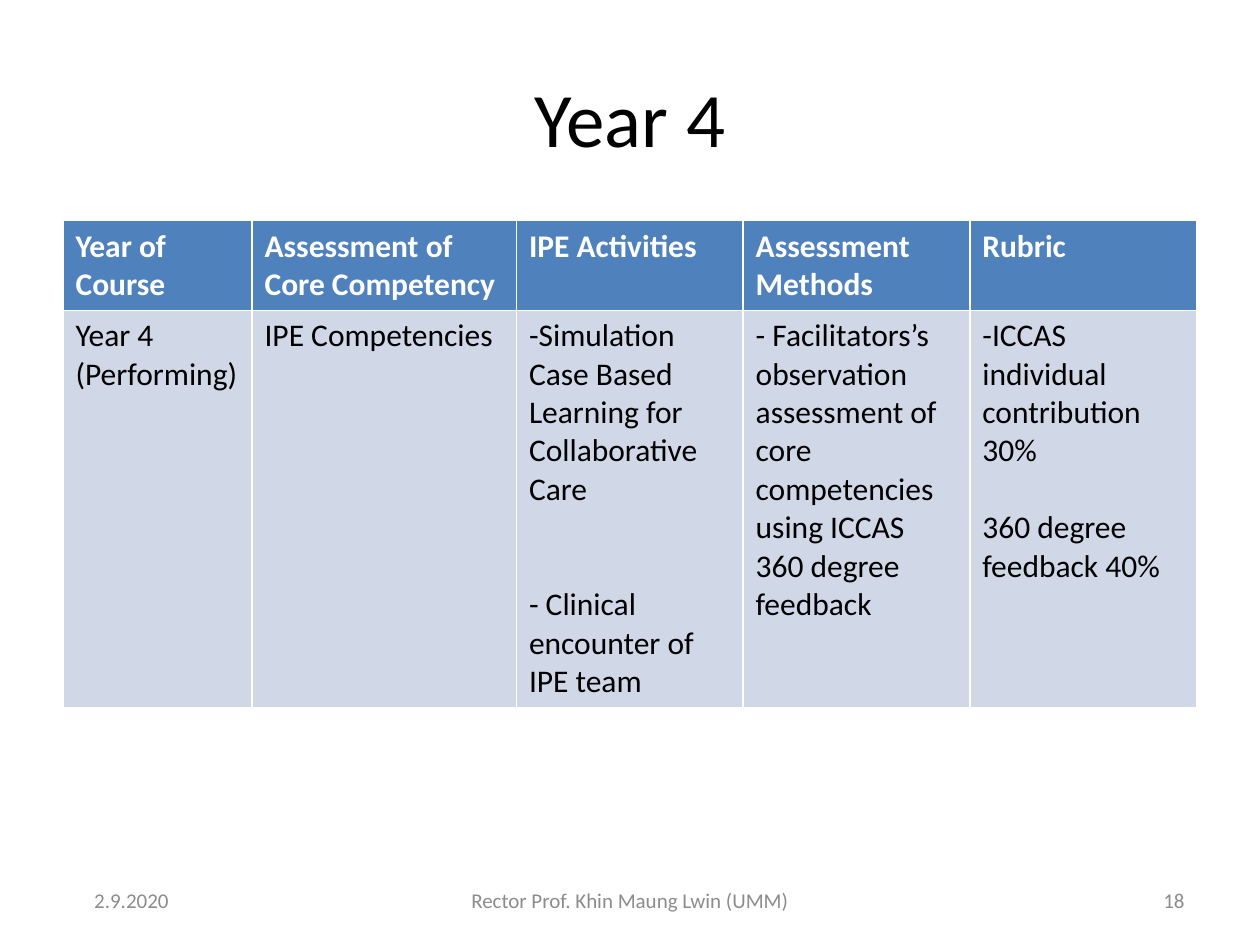
from pptx import Presentation
from pptx.dml import color
from pptx.enum import text
from pptx.util import Cm, Pt

COLORS = {
    "ink": "000000",
    "header_text": "FFFFFF",
    "header_fill": "4F81BD",
    "body_fill": "D0D8E8",
    "footer": "8C8C8C",
}
FONT = "Calibri"
LINE = 22
HEADINGS = ["Year of Course", "Assessment of Core Competency", "IPE Activities",
            "Assessment Methods", "Rubric"]
YEAR_PLAN = [
    [("Year 4", 0), ("(Performing)", 0)],
    [("IPE Competencies", 0)],
    [("-Simulation Case Based Learning for Collaborative Care", 0),
     ("- Clinical encounter of IPE team", 2)],
    [("- Facilitators’s observation assessment of core competencies "
      "using ICCAS 360 degree feedback", 0)],
    [("-ICCAS individual contribution 30%", 0), ("360 degree feedback 40%", 1)],
]
COLUMN_WIDTHS = [3.81, 5.33, 4.57, 4.57, 4.57]
ROW_HEIGHTS = [1.78, 7.87]


def rgb(name):
    """Return the named colour."""
    return color.RGBColor.from_string(COLORS[name])


def format_runs(paragraph, size, ink, bold=False):
    """Format every run of a paragraph."""
    for run in paragraph.runs:
        run.font.name = FONT
        run.font.size = Pt(size)
        run.font.bold = bold
        run.font.color.rgb = rgb(ink)


def add_title(slide, wording):
    """Fill and place the title placeholder."""
    title = slide.shapes.title
    title.left, title.top, title.width, title.height = Cm(1.27), Cm(0.76), Cm(22.86), Cm(3.18)
    title.text_frame.text = wording
    title.text_frame.vertical_anchor = text.MSO_ANCHOR.MIDDLE
    heading = title.text_frame.paragraphs[0]
    heading.alignment = text.PP_ALIGN.CENTER
    format_runs(heading, 44, "ink")


def fill_cell(cell, entries, fill, ink, bold=False):
    """Write (wording, lines of space before) entries into a table cell."""
    cell.fill.solid()
    cell.fill.fore_color.rgb = rgb(fill)
    cell.text_frame.text = "\n".join(wording for wording, _ in entries)
    for paragraph, (_, gap) in zip(cell.text_frame.paragraphs, entries):
        if gap:
            paragraph.space_before = Pt(gap * LINE)
        format_runs(paragraph, 18, ink, bold)


def add_plan_table(slide):
    """Add the assessment plan table."""
    plan = slide.shapes.add_table(
        len(ROW_HEIGHTS), len(COLUMN_WIDTHS), Cm(1.27), Cm(4.45),
        Cm(sum(COLUMN_WIDTHS)), Cm(sum(ROW_HEIGHTS))).table
    for column, width in zip(plan.columns, COLUMN_WIDTHS):
        column.width = Cm(width)
    for row, height in zip(plan.rows, ROW_HEIGHTS):
        row.height = Cm(height)
    for index, (heading, entries) in enumerate(zip(HEADINGS, YEAR_PLAN)):
        fill_cell(plan.cell(0, index), [(heading, 0)], "header_fill", "header_text", True)
        fill_cell(plan.cell(1, index), entries, "body_fill", "ink")


def add_footer(slide, wording, left, width, alignment, indent=0.25):
    """Add one part of the footer line."""
    footer = slide.shapes.add_textbox(Cm(left), Cm(17.65), Cm(width), Cm(1.01))
    frame = footer.text_frame
    frame.word_wrap = True
    frame.margin_left = Cm(indent)
    frame.vertical_anchor = text.MSO_ANCHOR.MIDDLE
    frame.text = wording
    frame.paragraphs[0].alignment = alignment
    format_runs(frame.paragraphs[0], 12, "footer")


def main():
    """Build and save the slide."""
    deck = Presentation()
    deck.slide_width, deck.slide_height = Cm(25.4), Cm(19.05)
    slide = deck.slides.add_slide(deck.slide_layouts.get_by_name("Title Only"))
    add_title(slide, "Year 4")
    add_plan_table(slide)
    add_footer(slide, "2.9.2020", 1.27, 5.93, text.PP_ALIGN.LEFT, 0.63)
    add_footer(slide, "Rector Prof. Khin Maung Lwin (UMM)", 8.68, 8.04, text.PP_ALIGN.CENTER)
    add_footer(slide, "18", 18.2, 5.93, text.PP_ALIGN.RIGHT)
    deck.save("out.pptx")


if __name__ == "__main__":
    main()
